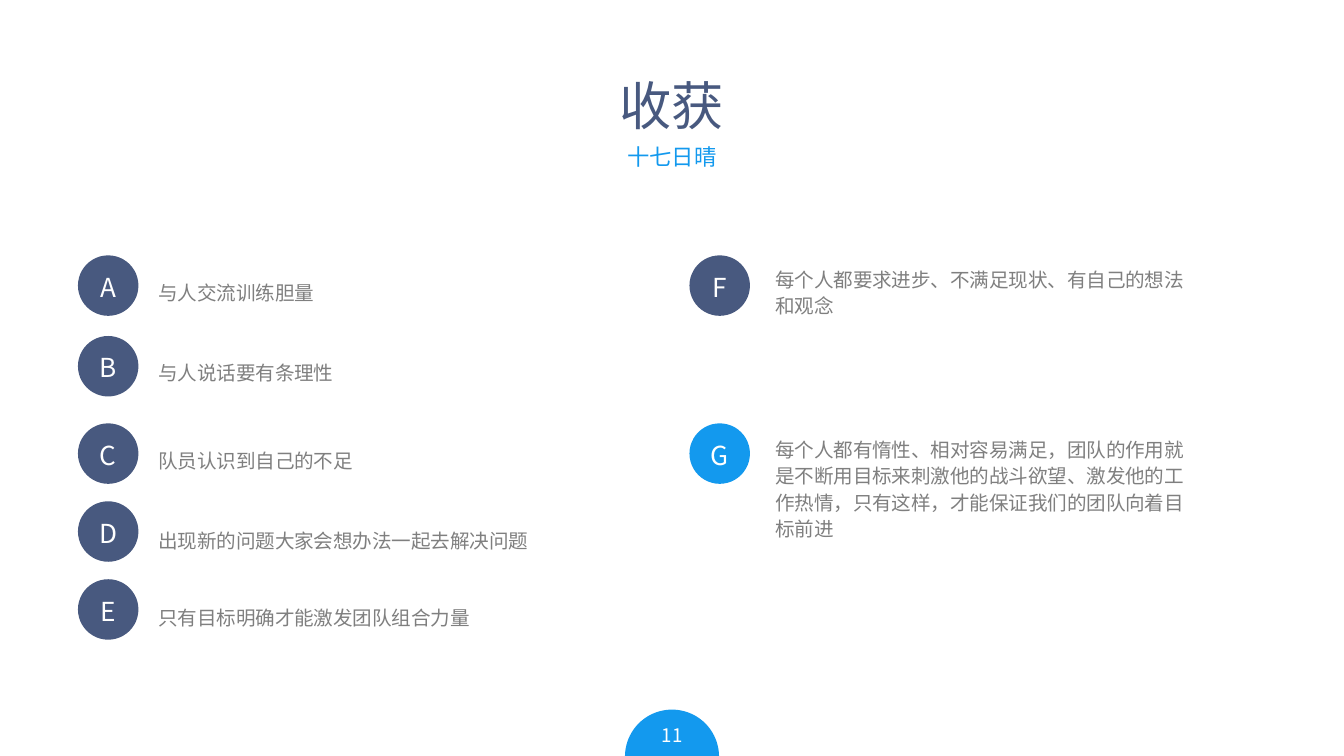
from pptx import Presentation
from pptx.dml.color import RGBColor
from pptx.enum.shapes import MSO_SHAPE as Shape
from pptx.enum.text import MSO_ANCHOR as Anchor, PP_ALIGN as Align
from pptx.util import Inches, Pt

NAVY = RGBColor(0x48, 0x59, 0x7F)
BLUE = RGBColor(0x13, 0x99, 0xEE)
GRAY = RGBColor(0x7F, 0x7F, 0x7F)
WHITE = RGBColor(0xFF, 0xFF, 0xFF)
FONT = "Noto Sans CJK SC"

BADGE_SIZE = 0.45
LABEL_SIZE = (3.33, 0.44)

# letter, badge colour, badge top, label offset below badge top, label
LEFT_ITEMS = [
    ("A", NAVY, 1.9, 0.05, "与人交流训练胆量"),
    ("B", NAVY, 2.5, 0.04, "与人说话要有条理性"),
    ("C", NAVY, 3.15, 0.05, "队员认识到自己的不足"),
    ("D", NAVY, 3.73, 0.06, "出现新的问题大家会想办法一起去解决问题"),
    ("E", NAVY, 4.31, 0.06, "只有目标明确才能激发团队组合力量"),
]
RIGHT_ITEMS = [
    ("F", NAVY, 1.9, 0.05, "每个人都要求进步、不满足现状、有自己的想法和观念"),
    ("G", BLUE, 3.15, 0.26,
     "每个人都有惰性、相对容易满足，团队的作用就是不断用目标来刺激他的战斗欲望、"
     "激发他的工作热情，只有这样，才能保证我们的团队向着目标前进"),
]


def write(shape, text, size, color, align=Align.CENTER, spacing=None, anchor=Anchor.MIDDLE):
    frame = shape.text_frame
    frame.text = text
    frame.word_wrap = True
    frame.vertical_anchor = anchor
    paragraph = frame.paragraphs[0]
    paragraph.alignment = align
    if spacing:
        paragraph.line_spacing = Pt(spacing)
    font = paragraph.runs[0].font
    font.name, font.size = FONT, Pt(size)
    font.color.rgb = color


def add_text(slide, box, text, size, color, **layout):
    textbox = slide.shapes.add_textbox(*map(Inches, box))
    write(textbox, text, size, color, **layout)


def add_filled(slide, kind, box, color):
    shape = slide.shapes.add_shape(kind, *map(Inches, box))
    shape.shadow.inherit = False
    shape.fill.solid()
    shape.fill.fore_color.rgb = color
    shape.line.fill.background()
    return shape


def add_heading(slide, left, top, width):
    add_text(slide, (left, top, width, 0.94), "收获", 28, NAVY)
    add_text(slide, (left + 1.75, top + 0.65, width - 3.5, 0.35), "十七日晴", 12, BLUE,
             spacing=18.2, anchor=Anchor.TOP)


def add_item_column(slide, left, label_left, items):
    """Place lettered badges at left, each with its label at label_left."""
    for letter, color, top, label_offset, label in items:
        badge = add_filled(slide, Shape.OVAL, (left, top, BADGE_SIZE, BADGE_SIZE), color)
        badge.text_frame.margin_left = badge.text_frame.margin_right = 0
        write(badge, letter, 14, WHITE, spacing=18.2)
        add_text(slide, (label_left, top + label_offset, *LABEL_SIZE), label, 10.5, GRAY,
                 align=Align.LEFT, spacing=14)


def add_page_number(slide, left, top, size, number):
    half_disc = add_filled(slide, Shape.PIE, (left, top, size, size), BLUE)
    half_disc.adjustments[0] = 0
    half_disc.adjustments[1] = 107.82
    half_disc.rotation = 180
    add_text(slide, (left + 0.14, top + 0.04, size - 0.28, 0.3), number, 10, WHITE)


def main():
    deck = Presentation()
    deck.slide_width, deck.slide_height = Inches(10), Pt(405)
    slide = deck.slides.add_slide(deck.slide_layouts[6])
    add_page_number(slide, 4.65, 5.28, 0.7, "11")
    add_item_column(slide, 0.58, 1.08, LEFT_ITEMS)
    add_item_column(slide, 5.13, 5.67, RIGHT_ITEMS)
    add_heading(slide, 0.5, 0.31, 9)
    deck.save("out.pptx")


if __name__ == "__main__":
    main()
